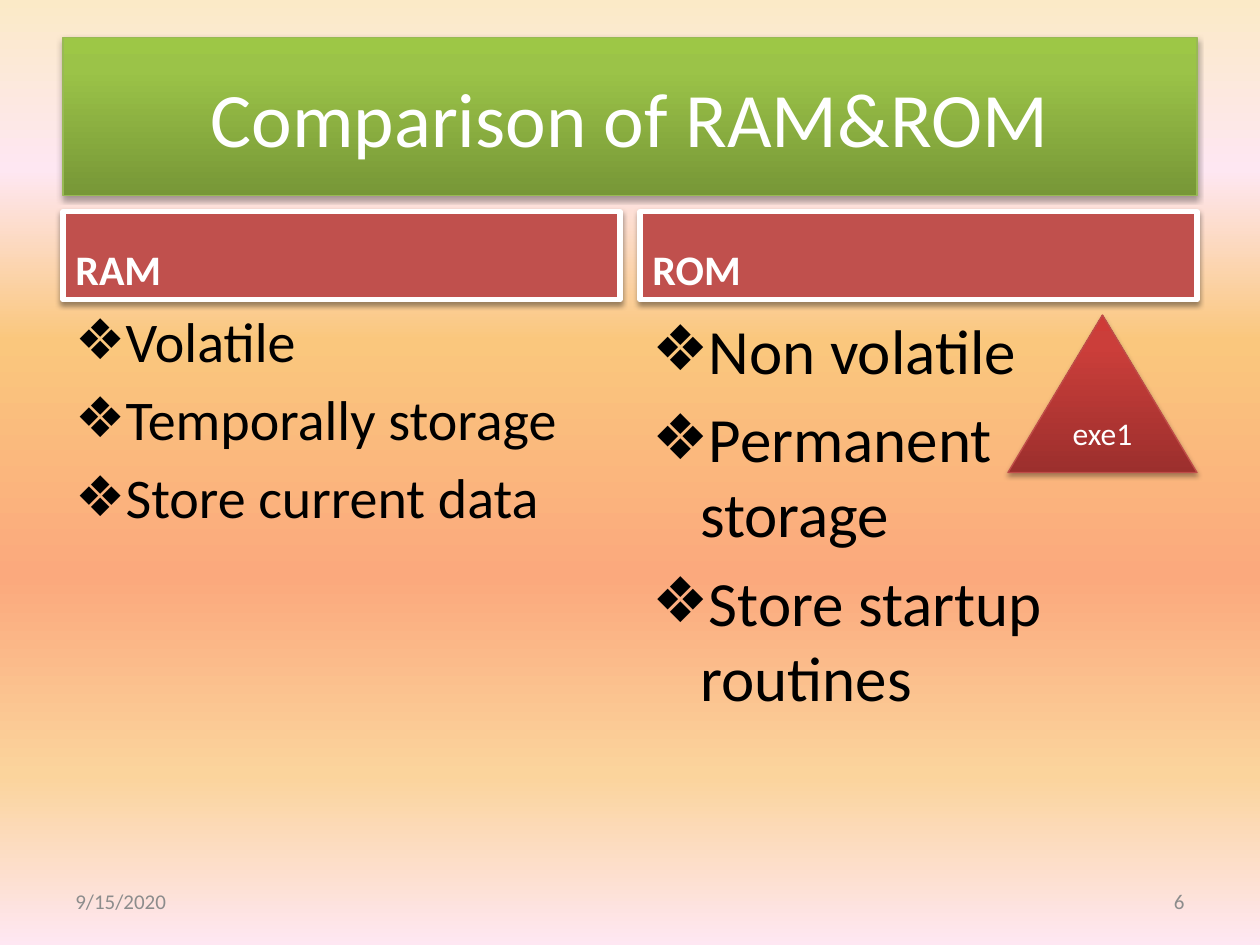
from dataclasses import dataclass

from lxml.etree import SubElement
from pptx import Presentation
from pptx.dml.color import RGBColor
from pptx.enum.shapes import MSO_SHAPE
from pptx.enum.text import MSO_ANCHOR, MSO_AUTO_SIZE, PP_ALIGN
from pptx.oxml.ns import qn
from pptx.shapes.autoshape import Shape
from pptx.slide import Slide
from pptx.text.text import TextFrame
from pptx.util import Inches, Pt

FONT = "Calibri"
WHITE = RGBColor(0xFF, 0xFF, 0xFF)
BLACK = RGBColor(0x00, 0x00, 0x00)
GRAY = RGBColor(0x8C, 0x8C, 0x8C)
HEADER_RED = RGBColor(0xC0, 0x50, 0x4D)
TRIANGLE_LINE = RGBColor(0xBF, 0x4C, 0x48)
TITLE_LINE = RGBColor(0x98, 0xB9, 0x55)

Stops = list[tuple[int, RGBColor]]
SUNSET: Stops = [
    (0, RGBColor(0xFB, 0xEA, 0xC7)),
    (18, RGBColor(0xFE, 0xE7, 0xF2)),
    (36, RGBColor(0xFA, 0xC7, 0x7D)),
    (61, RGBColor(0xFB, 0xA9, 0x7D)),
    (82, RGBColor(0xFB, 0xD4, 0x9C)),
    (100, RGBColor(0xFE, 0xE7, 0xF2)),
]
RED_GRADIENT: Stops = [
    (0, RGBColor(0x9C, 0x2F, 0x2D)),
    (80, RGBColor(0xCB, 0x3E, 0x3A)),
    (100, RGBColor(0xCE, 0x3B, 0x37)),
]
GREEN_GRADIENT: Stops = [
    (0, RGBColor(0x77, 0x97, 0x37)),
    (80, RGBColor(0x9B, 0xC3, 0x48)),
    (100, RGBColor(0x9D, 0xC7, 0x46)),
]

MARGIN = 0.5
COLUMN_WIDTH = 4.42
HEADER_TOP = 1.68
HEADER_HEIGHT = 0.7
BODY_BOTTOM = 6.7
FOOTER_WIDTH = 2.33
RIGHT_EDGE = 9.5


@dataclass(frozen=True)
class Column:
    heading: str
    points: tuple[str, ...]
    left: float
    body_top: float
    body_width: float
    size: int


COLUMNS = (
    Column("RAM", ("Volatile", "Temporally storage", "Store current data"),
           MARGIN, 2.38, COLUMN_WIDTH, 32),
    Column("ROM", ("Non volatile", "Permanent storage", "Store startup routines"),
           RIGHT_EDGE - COLUMN_WIDTH, 2.42, 3.42, 36),
)


def set_gradient(owner: Slide | Shape, stops: Stops, angle: int) -> None:
    """Fill a shape or a slide background; the angle is counter-clockwise."""
    fill = owner.background.fill if isinstance(owner, Slide) else owner.fill
    fill.gradient()
    fill.gradient_angle = angle
    stop_list = next(owner.element.iter(qn("a:gsLst")))
    for stop in list(stop_list):
        stop_list.remove(stop)
    for position, color in stops:
        stop = SubElement(stop_list, qn("a:gs"), pos=str(position * 1000))
        SubElement(stop, qn("a:srgbClr"), val=str(color))


def set_line(shape: Shape, color: RGBColor, width: float) -> None:
    shape.line.color.rgb = color
    shape.line.width = Pt(width)


def set_shadow(shape: Shape, opacity: int, distance: float) -> None:
    shape.shadow.inherit = False
    effects = next(shape.element.iter(qn("a:effectLst")))
    shadow = SubElement(effects, qn("a:outerShdw"), blurRad=str(Pt(3.1)),
                        dist=str(Pt(distance)), dir="5400000", rotWithShape="0")
    color = SubElement(shadow, qn("a:srgbClr"), val=str(BLACK))
    SubElement(color, qn("a:alpha"), val=str(opacity * 1000))


def add_bullet(paragraph_properties) -> None:
    indent = Inches(0.38)
    paragraph_properties.set("marL", str(indent))
    paragraph_properties.set("indent", str(-indent))
    SubElement(paragraph_properties, qn("a:buFont"), typeface="Arial")
    SubElement(paragraph_properties, qn("a:buChar"), char="❖")


def write_text(frame: TextFrame, lines: tuple[str, ...], size: int, color: RGBColor,
               anchor: MSO_ANCHOR = MSO_ANCHOR.MIDDLE,
               align: PP_ALIGN = PP_ALIGN.LEFT, bold: bool = False,
               space_before: float = 0, bulleted: bool = False) -> None:
    frame.word_wrap = True
    frame.auto_size = MSO_AUTO_SIZE.NONE
    frame.vertical_anchor = anchor
    for index, line in enumerate(lines):
        paragraph = frame.add_paragraph() if index else frame.paragraphs[0]
        paragraph.alignment = align
        paragraph.space_before = Pt(space_before)
        if bulleted:
            add_bullet(paragraph._p.get_or_add_pPr())
        run = paragraph.add_run()
        run.text = line
        run.font.name = FONT
        run.font.size = Pt(size)
        run.font.bold = bold
        run.font.color.rgb = color


def add_triangle(slide: Slide) -> None:
    triangle = slide.shapes.add_shape(MSO_SHAPE.ISOSCELES_TRIANGLE, Inches(8),
                                      Inches(2.5), Inches(1.5), Inches(1.25))
    set_gradient(triangle, RED_GRADIENT, 90)
    set_line(triangle, TRIANGLE_LINE, 0.75)
    set_shadow(triangle, 35, 1.8)
    write_text(triangle.text_frame, ("exe1",), 18, WHITE, align=PP_ALIGN.CENTER)


def format_title(slide: Slide) -> None:
    title = slide.shapes.title
    title.left, title.top = Inches(MARGIN), Inches(0.3)
    title.width, title.height = Inches(9), Inches(1.25)
    set_gradient(title, GREEN_GRADIENT, 90)
    set_line(title, TITLE_LINE, 0.75)
    set_shadow(title, 35, 1.8)
    write_text(title.text_frame, ("Comparison of RAM&ROM",), 44, WHITE,
               align=PP_ALIGN.CENTER)


def add_column(slide: Slide, column: Column) -> None:
    header = slide.shapes.add_shape(
        MSO_SHAPE.RECTANGLE, Inches(column.left), Inches(HEADER_TOP),
        Inches(COLUMN_WIDTH), Inches(HEADER_HEIGHT))
    header.fill.solid()
    header.fill.fore_color.rgb = HEADER_RED
    set_line(header, WHITE, 3)
    set_shadow(header, 38, 1.6)
    write_text(header.text_frame, (column.heading,), 24, WHITE,
               MSO_ANCHOR.BOTTOM, bold=True, space_before=4.8)

    body = slide.shapes.add_textbox(
        Inches(column.left), Inches(column.body_top),
        Inches(column.body_width), Inches(BODY_BOTTOM - column.body_top))
    write_text(body.text_frame, column.points, column.size, BLACK, MSO_ANCHOR.TOP,
               space_before=0.2 * column.size, bulleted=True)


def add_footer(slide: Slide, text: str, left: float, align: PP_ALIGN) -> None:
    footer = slide.shapes.add_textbox(Inches(left), Inches(6.95),
                                      Inches(FOOTER_WIDTH), Inches(0.4))
    write_text(footer.text_frame, (text,), 12, GRAY, align=align)


def main() -> None:
    presentation = Presentation()
    presentation.slide_width, presentation.slide_height = Inches(10), Inches(7.5)
    slide = presentation.slides.add_slide(
        presentation.slide_layouts.get_by_name("Title Only"))
    set_gradient(slide, SUNSET, 270)
    format_title(slide)
    add_triangle(slide)
    for column in COLUMNS:
        add_column(slide, column)
    add_footer(slide, "9/15/2020", MARGIN, PP_ALIGN.LEFT)
    add_footer(slide, "6", RIGHT_EDGE - FOOTER_WIDTH, PP_ALIGN.RIGHT)
    presentation.save("out.pptx")


if __name__ == "__main__":
    main()
